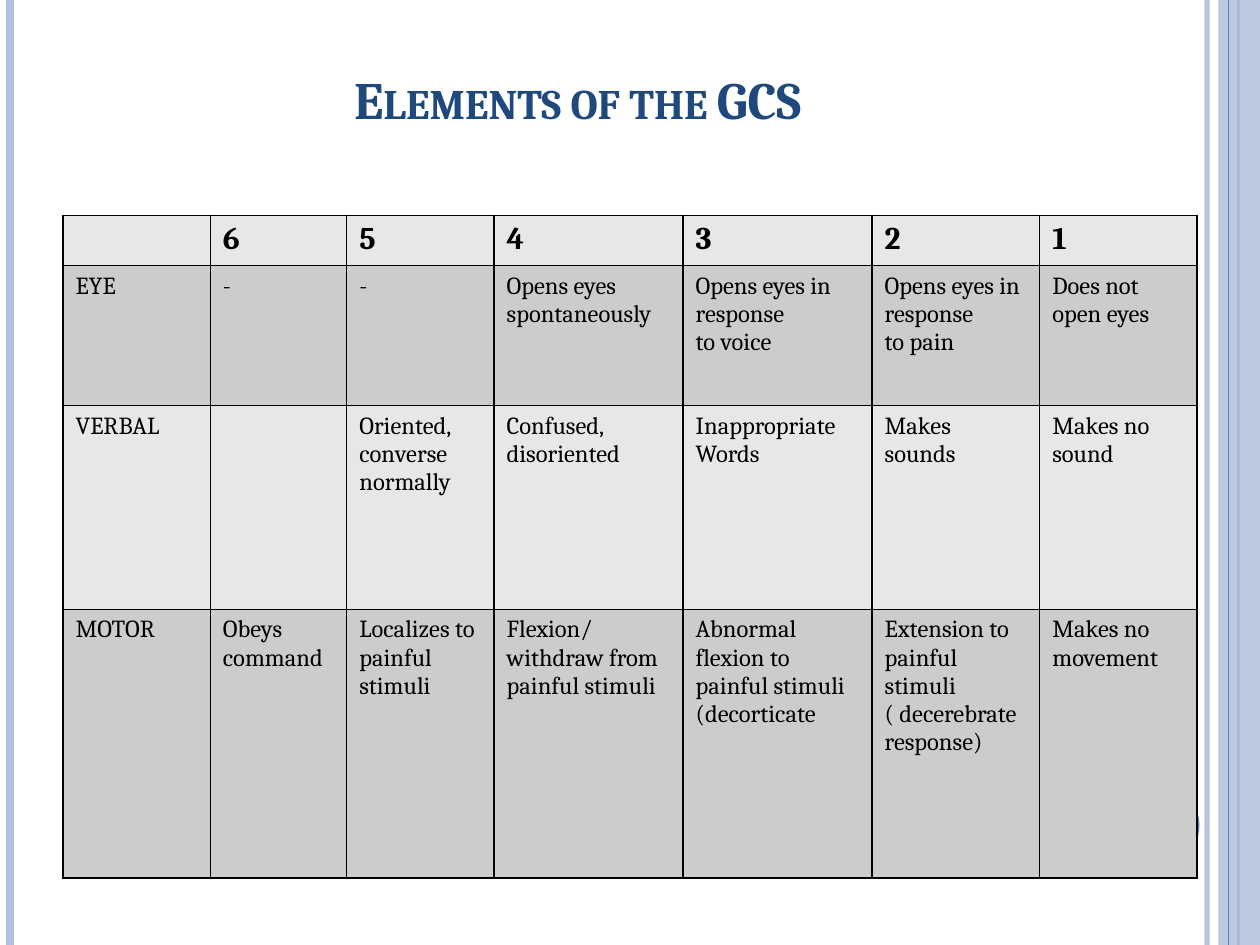
from lxml.etree import SubElement
from pptx import Presentation
from pptx.dml.color import RGBColor
from pptx.enum.shapes import MSO_CONNECTOR, MSO_SHAPE
from pptx.enum.text import MSO_ANCHOR, PP_ALIGN
from pptx.oxml.ns import qn
from pptx.util import Cm, Pt

FONT = "Cambria"
PALE_BLUE, BLUE, NAVY, BLACK = "B3C1DB", "4F81BD", "1F497D", "000000"
LIGHT_GREY, MID_GREY = "E7E7E7", "CCCCCC"
SLIDE_WIDTH, SLIDE_HEIGHT = 25.4, 19.05

COLUMN_WIDTHS = [2.97, 2.75, 2.97, 3.81, 3.81, 3.38, 3.17]
ROW_HEIGHTS = [0.99, 2.82, 4.11, 5.41]
SCALE_ROWS = [
    ["", "6", "5", "4", "3", "2", "1"],
    ["EYE", "-", "-", "Opens eyes\nspontaneously", "Opens eyes in\nresponse\nto voice",
     "Opens eyes in\nresponse\nto pain", "Does not\nopen eyes"],
    ["VERBAL", "", "Oriented, converse normally", "Confused, disoriented",
     "Inappropriate Words", "Makes sounds", "Makes no sound"],
    ["MOTOR", "Obeys command", "Localizes to painful stimuli",
     "Flexion/\nwithdraw from painful stimuli",
     "Abnormal flexion to painful stimuli (decorticate",
     "Extension to painful stimuli ( decerebrate response)", "Makes no movement"],
]


def color(value):
    return RGBColor.from_string(value)


def set_opacity(element, percent):
    """Make the solid colour inside an element partly transparent."""
    for rgb in element.iter(qn("a:srgbClr")):
        SubElement(rgb, qn("a:alpha"), val=str(percent * 1000))


def write_text(text_frame, text, size=14, text_color=BLACK, bold=False,
               small_caps=False, align=PP_ALIGN.LEFT):
    text_frame.word_wrap = True
    for index, line in enumerate(text.split("\n")):
        paragraph = text_frame.add_paragraph() if index else text_frame.paragraphs[0]
        paragraph.alignment = align
        run = paragraph.add_run()
        run.text = line
        run.font.name = FONT
        run.font.size = Pt(size)
        run.font.bold = bold
        run.font.color.rgb = color(text_color)
        if small_caps:
            run.font._element.set("cap", "small")


def add_vertical_line(slide, x, line_color, width, opacity=100):
    connector = slide.shapes.add_connector(
        MSO_CONNECTOR.STRAIGHT, Cm(x), Cm(0), Cm(x), Cm(SLIDE_HEIGHT))
    connector.line.color.rgb = color(line_color)
    connector.line.width = Pt(width)
    properties = connector._element.spPr
    if opacity < 100:
        set_opacity(properties, opacity)
    SubElement(properties, qn("a:effectLst"))


def add_filled_shape(slide, kind, left, top, width, height, fill, opacity=100):
    shape = slide.shapes.add_shape(kind, Cm(left), Cm(top), Cm(width), Cm(height))
    shape.shadow.inherit = False
    shape.fill.solid()
    shape.fill.fore_color.rgb = color(fill)
    if opacity < 100:
        set_opacity(shape._element.spPr, opacity)
    shape.line.fill.background()


def add_title(slide, text):
    box = slide.shapes.add_textbox(Cm(1.27), Cm(0.76), Cm(20.75), Cm(1.98))
    box.text_frame.vertical_anchor = MSO_ANCHOR.BOTTOM
    write_text(box.text_frame, text, size=30, text_color=NAVY, bold=True,
               small_caps=True, align=PP_ALIGN.CENTER)


def format_cell(cell, fill):
    """Draw the four borders, then fill the cell."""
    properties = cell._tc.get_or_add_tcPr()
    for side in ("lnL", "lnR", "lnT", "lnB"):
        border = SubElement(properties, qn(f"a:{side}"), w=str(Pt(1)))
        solid = SubElement(border, qn("a:solidFill"))
        SubElement(solid, qn("a:srgbClr"), val=BLACK)
    cell.fill.solid()
    cell.fill.fore_color.rgb = color(fill)


def add_scale_table(slide):
    table = slide.shapes.add_table(
        len(ROW_HEIGHTS), len(COLUMN_WIDTHS), Cm(1.27), Cm(4.34),
        Cm(sum(COLUMN_WIDTHS)), Cm(sum(ROW_HEIGHTS))).table
    for column, width in zip(table.columns, COLUMN_WIDTHS):
        column.width = Cm(width)
    for row_index, (row, height) in enumerate(zip(table.rows, ROW_HEIGHTS)):
        row.height = Cm(height)
        is_header = row_index == 0
        for cell, text in zip(row.cells, SCALE_ROWS[row_index]):
            format_cell(cell, MID_GREY if row_index % 2 else LIGHT_GREY)
            if text:
                write_text(cell.text_frame, text, size=18 if is_header else 14,
                           bold=is_header)


def add_side_bands(slide):
    add_vertical_line(slide, 24.33, PALE_BLUE, 3, opacity=93)
    add_vertical_line(slide, 0.2, PALE_BLUE, 4.5)
    add_vertical_line(slide, 24.97, BLUE, 1.5)
    add_filled_shape(slide, MSO_SHAPE.RECTANGLE, 24.56, 0, SLIDE_WIDTH - 24.56,
                     SLIDE_HEIGHT, PALE_BLUE, opacity=87)
    add_vertical_line(slide, 24.77, BLUE, 0.75)
    add_filled_shape(slide, MSO_SHAPE.OVAL, 22.66, 15.88, 1.52, 1.52, BLUE)


def main():
    presentation = Presentation()
    presentation.slide_width = Cm(SLIDE_WIDTH)
    presentation.slide_height = Cm(SLIDE_HEIGHT)
    slide = presentation.slides.add_slide(presentation.slide_layouts[6])
    add_side_bands(slide)
    add_title(slide, "Elements of the GCS")
    add_scale_table(slide)
    presentation.save("out.pptx")


if __name__ == "__main__":
    main()
